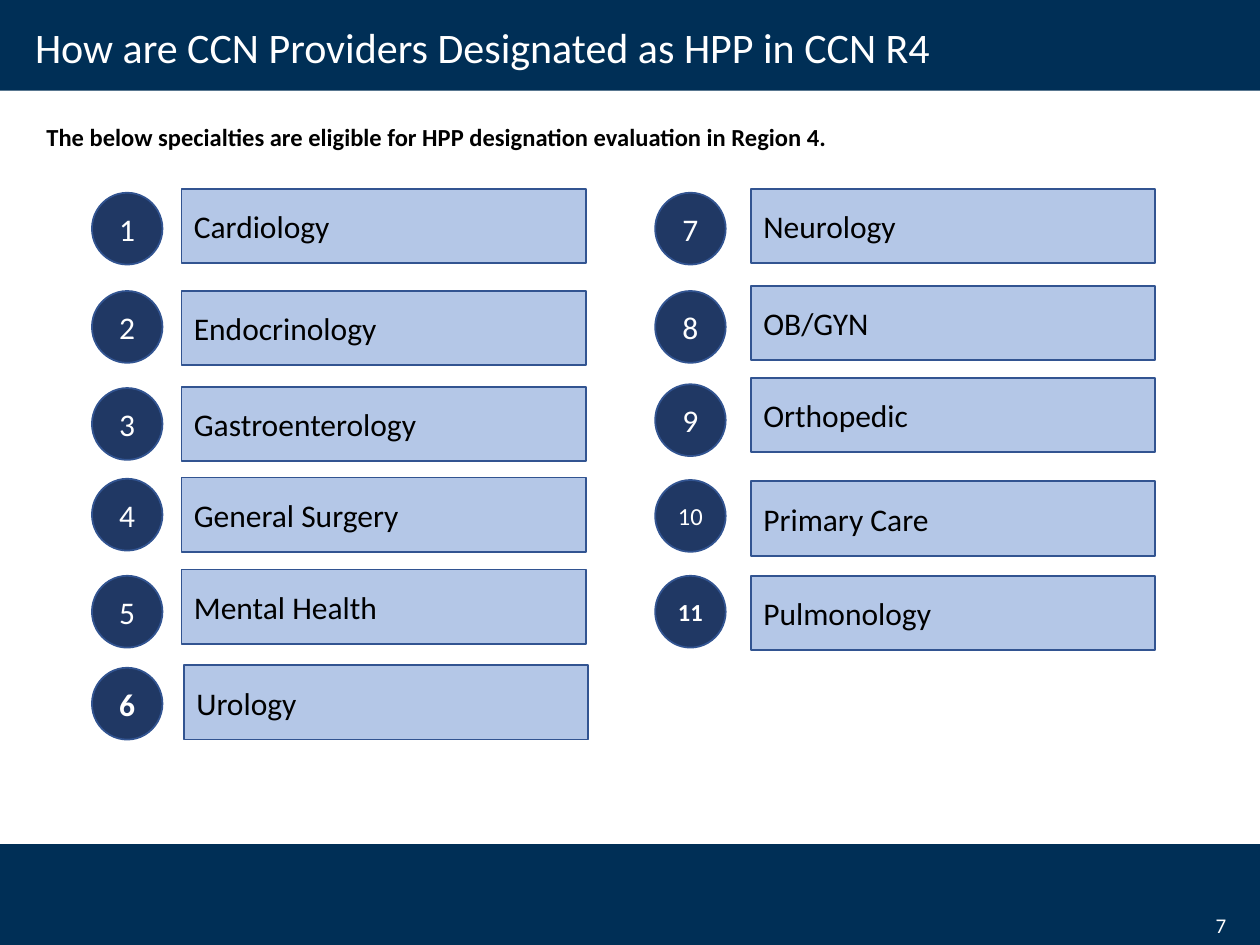
import dataclasses
import pptx
import pptx.util
import pptx.dml.color
import pptx.enum.shapes
import pptx.enum.text

Inches = pptx.util.Inches
Pt = pptx.util.Pt
Shape = pptx.enum.shapes.MSO_SHAPE
Align = pptx.enum.text.PP_ALIGN
Anchor = pptx.enum.text.MSO_ANCHOR

WIDE, HIGH = 10, 7.5
FONT = "Calibri"
COLORS = {
    "band": "002F56",
    "bar": "B4C7E7",
    "dot": "203864",
    "edge": "325491",
    "white": "FFFFFF",
    "black": "000000",
}

# Grid of numbered specialties, in inches
ROW = 0.76
DOT_TOP, BAR_TOP = 1.53, 1.5
DOT_LEFT, BAR_LEFT = (0.73, 5.2), (1.44, 5.96)
DOT_SIZE, BAR_SIZE = (0.56, 0.57), (3.21, 0.59)
PER_COL = 6


@dataclasses.dataclass
class Box:
    left: float
    top: float
    width: float
    height: float

    def lengths(self) -> list:
        return [Inches(n) for n in (self.left, self.top, self.width, self.height)]


@dataclasses.dataclass
class Item:
    name: str
    dot_dy: float = 0  # small shifts from the grid row
    bar_dy: float = 0
    bar_dx: float = 0
    size: int = 18
    bold: bool = False


ITEMS = [
    Item("Cardiology"),
    Item("Endocrinology", 0.02, 0.05),
    Item("Gastroenterology", 0.03, 0.05),
    Item("General Surgery", -0.01, 0.01),
    Item("Mental Health", 0, -0.02),
    Item("Urology", -0.03, -0.02, 0.02, bold=True),
    Item("Neurology"),
    Item("OB/GYN", 0.02, 0.01),
    Item("Orthopedic", 0, -0.02),
    Item("Primary Care", 0, 0.04, size=14),
    Item("Pulmonology", 0, 0.03, size=14, bold=True),
]


def color(name: str) -> pptx.dml.color.RGBColor:
    return pptx.dml.color.RGBColor.from_string(COLORS[name])


def write(shape, text: str, size: int, ink: str, bold: bool = False,
          align=Align.LEFT, anchor=Anchor.MIDDLE) -> None:
    frame = shape.text_frame
    frame.text = text
    frame.word_wrap = True
    frame.vertical_anchor = anchor
    para = frame.paragraphs[0]
    para.alignment = align
    font = para.runs[0].font
    font.name, font.size, font.bold = FONT, Pt(size), bold
    font.color.rgb = color(ink)


def draw(slide, kind, box: Box, fill: str, edge: str = ""):
    shape = slide.shapes.add_shape(kind, *box.lengths())
    shape.shadow.inherit = False
    shape.fill.solid()
    shape.fill.fore_color.rgb = color(fill)
    if edge:
        shape.line.color.rgb = color(edge)
        shape.line.width = Pt(1)
    else:
        shape.line.fill.background()
    return shape


def label(slide, box: Box, text: str, size: int, ink: str, **style):
    shape = slide.shapes.add_textbox(*box.lengths())
    write(shape, text, size, ink, **style)
    return shape


def entry(slide, index: int, item: Item) -> None:
    col, row = divmod(index, PER_COL)
    bar = draw(slide, Shape.RECTANGLE,
               Box(BAR_LEFT[col] + item.bar_dx, BAR_TOP + row * ROW + item.bar_dy, *BAR_SIZE),
               "bar", "edge")
    write(bar, item.name, 18, "black")
    dot = draw(slide, Shape.OVAL,
               Box(DOT_LEFT[col], DOT_TOP + row * ROW + item.dot_dy, *DOT_SIZE),
               "dot", "edge")
    write(dot, str(index + 1), item.size, "white", item.bold, Align.CENTER)


def main() -> None:
    deck = pptx.Presentation()
    deck.slide_width, deck.slide_height = Inches(WIDE), Inches(HIGH)
    slide = deck.slides.add_slide(deck.slide_layouts[6])

    # Header and footer bands
    for top in (-0.08, HIGH - 0.8):
        draw(slide, Shape.RECTANGLE, Box(0, top, WIDE, 0.8), "band")

    # Title, lead sentence and page number
    title = label(slide, Box(0.18, -0.02, 9.75, 0.83),
                  "How are CCN Providers Designated as HPP in CCN R4", 24, "white")
    title.text_frame.paragraphs[0].line_spacing = 0.9
    label(slide, Box(0.27, 0.92, 8.92, 0.34),
          "The below specialties are eligible for HPP designation evaluation in Region 4.",
          14, "black", bold=True, anchor=Anchor.TOP)
    label(slide, Box(7.5, 7.18, 2.33, 0.32), "7", 12, "white", align=Align.RIGHT)

    # Numbered specialties
    for index, item in enumerate(ITEMS):
        entry(slide, index, item)

    deck.save("out.pptx")


if __name__ == "__main__":
    main()
